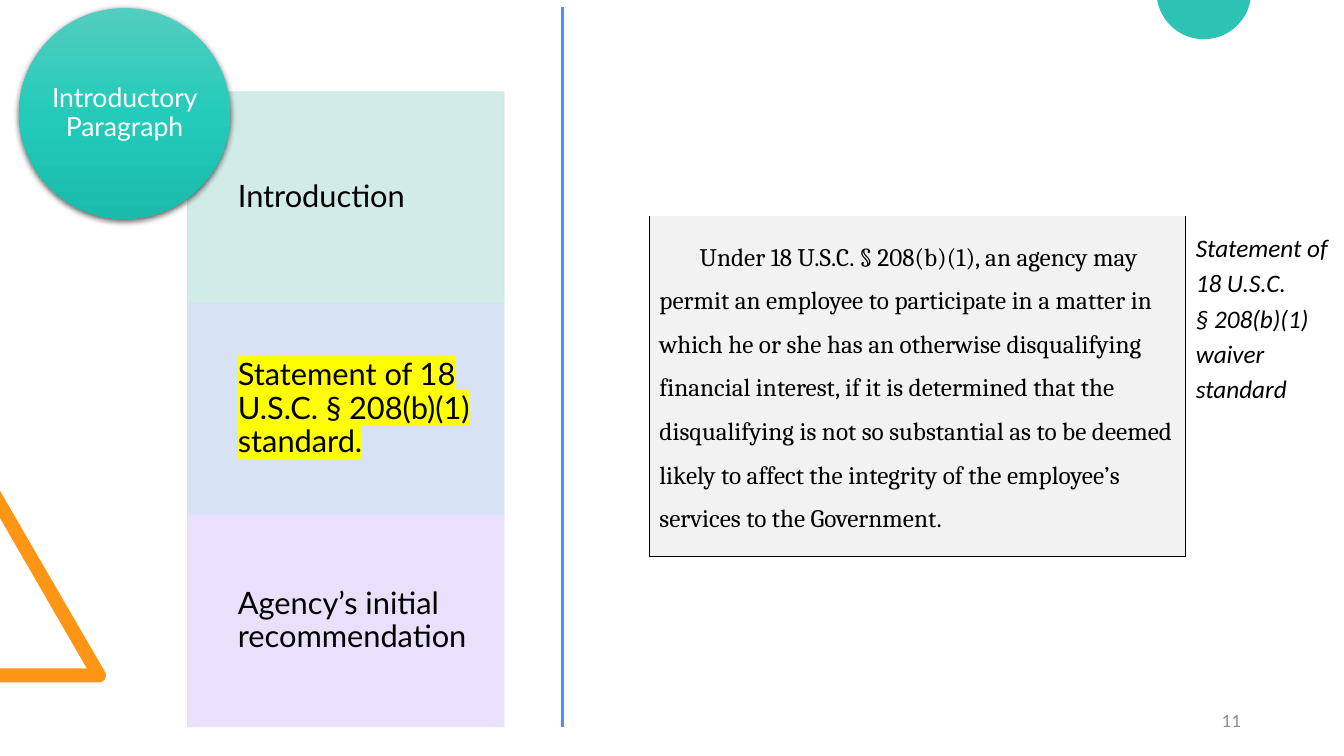
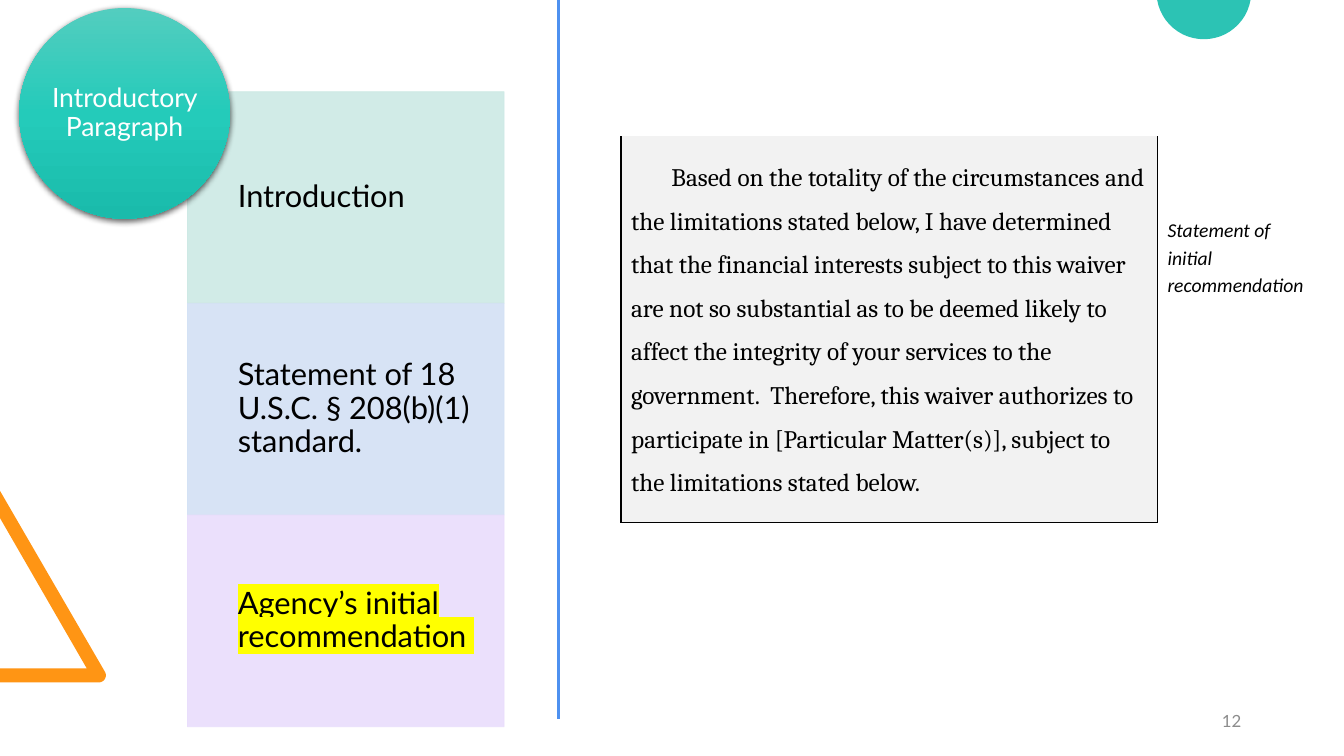
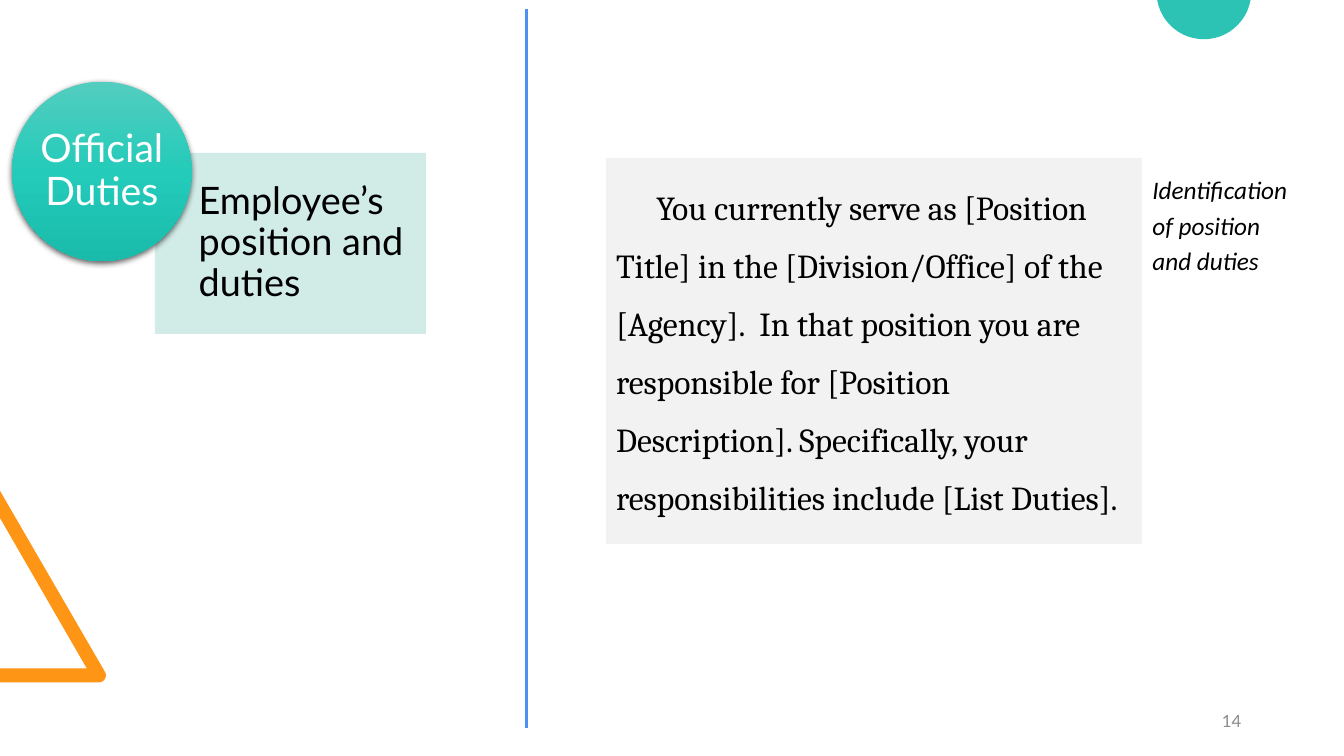
"""Build three slides that walk through the parts of a waiver letter."""
from dataclasses import dataclass
from math import cos, radians, sin

from lxml.etree import SubElement
from pptx import Presentation
from pptx.dml.color import RGBColor
from pptx.enum.shapes import MSO_CONNECTOR, MSO_SHAPE
from pptx.enum.text import MSO_ANCHOR, PP_ALIGN
from pptx.oxml.ns import qn
from pptx.util import Inches, Pt

COLOURS = {
    "orange": "FF9514", "teal": "2CC3B4", "rule": "4E91F0", "number": "8C8C8C",
    "mint": "CDE9E5", "sky": "D3E1F5", "lilac": "E9DDFC", "panel": "F2F2F2",
    "black": "000000", "white": "FFFFFF", "marker": "FFFF00",
    "circle top": "53CDBF", "circle middle": "24CBBA", "circle bottom": "1ABBAB",
}
BAND_COLOURS = ("mint", "sky", "lilac")
CIRCLE_STOPS = ((0, "circle top"), (50000, "circle middle"), (100000, "circle bottom"))


@dataclass(frozen=True)
class Outline:
    label: str
    label_size: int
    circle: tuple[float, float, float]
    topics: tuple[str, ...]
    topic_size: int
    band: tuple[float, float, float, float]
    indent: float
    inset: float


@dataclass(frozen=True)
class Excerpt:
    text: str
    size: int
    left: float
    top: float
    height: float
    remarks: tuple[str, ...]
    remark_size: int = 18
    remark_margin: float = 0.13
    borders: str = ""


@dataclass(frozen=True)
class Page:
    number: int
    outline: Outline
    excerpt: Excerpt
    rule: tuple[float, float, float]
    marked: int | None = None


INTRODUCTION = Outline(
    "Introductory Paragraph", 19, (0.19, 0.08, 2.09),
    ("Introduction", "Statement of 18 U.S.C. § 208(b)(1) standard.",
     "Agency’s initial recommendation "),
    22, (1.86, 0.91, 3.14, 2.1), 0.5, 0.17)
DUTIES = Outline(
    "Official Duties", 28, (0.12, 0.81, 1.78), ("Employee’s position and duties",),
    27, (1.54, 1.52, 2.68, 1.79), 0.43, 0.21)

PAGES = (
    Page(11, INTRODUCTION, Excerpt(
        "Under 18 U.S.C. § 208(b)(1), an agency may permit an employee to participate in a "
        "matter in which he or she has an otherwise disqualifying financial interest, if it is "
        "determined that the disqualifying is not so substantial as to be deemed likely to "
        "affect the integrity of the employee’s services to the Government.",
        18, 6.44, 2.14, 3.33,
        ("Statement of 18 U.S.C.", "§ 208(b)(1) waiver standard"), borders="LRB"),
        (5.58, 0.07, 7.21), marked=1),
    Page(12, INTRODUCTION, Excerpt(
        "Based on the totality of the circumstances and the limitations stated below, I have "
        "determined that the financial interests subject to this waiver are not so substantial "
        "as to be deemed likely to affect the integrity of your services to the government.  "
        "Therefore, this waiver authorizes to participate in [Particular Matter(s)], subject to "
        "the limitations stated below.",
        18, 6.16, 1.35, 4.23, ("Statement of initial recommendation",),
        remark_size=14, remark_margin=0.79, borders="LRB"),
        (5.54, 0, 7.13), marked=2),
    Page(14, DUTIES, Excerpt(
        "You currently serve as [Position Title] in the [Division/Office] of the [Agency].  In "
        "that position you are responsible for [Position Description]. Specifically, your "
        "responsibilities include [List Duties].",
        24, 6.01, 1.57, 4.37, ("Identification of position and duties",)),
        (5.22, 0.09, 7.22)),
)


def colour(name: str) -> RGBColor:
    return RGBColor.from_string(COLOURS[name])


def write(para, text: str, *, size: int, font: str = "Lato", ink: str = "black",
          italic: bool = False, marked: bool = False, spacing: float = 1.0,
          align=PP_ALIGN.LEFT, first_line: float = 0) -> None:
    para.alignment = align
    para.line_spacing = spacing
    if first_line:
        para._p.get_or_add_pPr().set("indent", str(Inches(first_line)))
    span = para.add_run()
    span.text = text
    span.font.name = font
    span.font.size = Pt(size)
    span.font.italic = italic
    span.font.color.rgb = colour(ink)
    if marked:
        properties = span._r.get_or_add_rPr()
        highlight = SubElement(properties, qn("a:highlight"))
        SubElement(highlight, qn("a:srgbClr"), val=COLOURS["marker"])
        properties.find(qn("a:solidFill")).addnext(highlight)


def set_frame(frame, left: float = 0.1, top: float = 0.05, right: float = 0.1,
              bottom: float = 0.05) -> None:
    frame.word_wrap = True
    frame.vertical_anchor = MSO_ANCHOR.MIDDLE
    frame.margin_left, frame.margin_top = Inches(left), Inches(top)
    frame.margin_right, frame.margin_bottom = Inches(right), Inches(bottom)


def arc(x: float, y: float, radius: float, start: int, end: int) -> list[tuple[float, float]]:
    steps = 24
    angles = [radians(start + (end - start) * step / steps) for step in range(steps + 1)]
    return [(x + radius * cos(angle), y + radius * sin(angle)) for angle in angles]


def add_outline_shape(page, points: list[tuple[float, float]], fill: str):
    corners = [(Inches(x), Inches(y)) for x, y in points]
    builder = page.shapes.build_freeform(*corners[0])
    builder.add_line_segments(corners[1:], close=True)
    shape = builder.convert_to_shape()
    shape.shadow.inherit = False
    shape.fill.solid()
    shape.fill.fore_color.rgb = colour(fill)
    shape.line.fill.background()
    return shape


def decorate_layout(layout, page) -> None:
    triangle = [(0, 6.77), (0, 6.63), (0.86, 6.63), (0, 5.14), (0, 4.87)]
    triangle += arc(0.98, 6.7, 0.07, -30, 90)
    disc = arc(11.94, -0.08, 0.47, 10, 170)
    for points, fill in ((triangle, "orange"), (disc, "teal")):
        layout.shapes.element.append(add_outline_shape(page, points, fill).element)


def add_band(page, outline: Outline, index: int, marked: bool) -> None:
    left, top, width, height = outline.band
    band = page.shapes.add_shape(MSO_SHAPE.RECTANGLE, Inches(left), Inches(top + index * height),
                                 Inches(width), Inches(height))
    band.shadow.inherit = False
    band.fill.solid()
    band.fill.fore_color.rgb = colour(BAND_COLOURS[index])
    band.line.color.rgb = colour(BAND_COLOURS[index])
    band.line.width = Pt(0.5)
    for tint in band.element.spPr.iter(qn("a:srgbClr")):
        SubElement(tint, qn("a:alpha"), val="90000")
    inset = outline.inset
    set_frame(band.text_frame, outline.indent, inset, inset, inset)
    write(band.text_frame.paragraphs[0], outline.topics[index], size=outline.topic_size,
          marked=marked, spacing=0.9)


def add_circle(page, outline: Outline) -> None:
    left, top, diameter = map(Inches, outline.circle)
    circle = page.shapes.add_shape(MSO_SHAPE.OVAL, left, top, diameter, diameter)
    circle.line.fill.background()
    circle.fill.gradient()
    circle.fill.gradient_angle = 270
    properties = circle.element.spPr
    stops = properties.find(".//" + qn("a:gsLst"))
    stops.clear()
    for position, name in CIRCLE_STOPS:
        stop = SubElement(stops, qn("a:gs"), pos=str(position))
        SubElement(stop, qn("a:srgbClr"), val=COLOURS[name])
    circle.shadow.inherit = False
    shadow = SubElement(properties.find(qn("a:effectLst")), qn("a:outerShdw"),
                        blurRad=str(Pt(4.5)), dist=str(Pt(1.5)), dir="5400000", rotWithShape="0")
    shade = SubElement(shadow, qn("a:srgbClr"), val=COLOURS["black"])
    SubElement(shade, qn("a:alpha"), val="63000")
    set_frame(circle.text_frame, 0, 0, 0, 0)
    write(circle.text_frame.paragraphs[0], outline.label, size=outline.label_size, ink="white",
          spacing=0.9, align=PP_ALIGN.CENTER)


def set_borders(cell, sides: str) -> None:
    properties = cell._tc.get_or_add_tcPr()
    for index, side in enumerate("LRTB"):
        edge = SubElement(properties, qn(f"a:ln{side}"), w=str(Pt(1)))
        if side in sides:
            SubElement(SubElement(edge, qn("a:solidFill")), qn("a:srgbClr"), val=COLOURS["black"])
        else:
            SubElement(edge, qn("a:noFill"))
        properties.insert(index, edge)


def add_excerpt(page, excerpt: Excerpt) -> None:
    widths = (5.32, 1.49)
    holder = page.shapes.add_table(1, 2, Inches(excerpt.left), Inches(excerpt.top),
                                   Inches(sum(widths)), Inches(excerpt.height))
    table = holder.table
    table.first_row = table.horz_banding = False
    table.rows[0].height = Inches(0)
    holder.height = Inches(excerpt.height)
    for column, width in zip(table.columns, widths):
        column.width = Inches(width)
    quote, remark = table.cell(0, 0), table.cell(0, 1)
    for cell, top, right in ((quote, 0.13, 0.1), (remark, excerpt.remark_margin, 0)):
        cell.margin_left, cell.margin_top = Inches(0.1), Inches(top)
        cell.margin_right, cell.margin_bottom = Inches(right), Inches(0.1)
    quote.fill.solid()
    quote.fill.fore_color.rgb = colour("panel")
    remark.fill.background()
    set_borders(quote, excerpt.borders)
    set_borders(remark, "L" if excerpt.borders else "")
    write(quote.text_frame.paragraphs[0], excerpt.text, size=excerpt.size, font="Cambria",
          spacing=1.5, first_line=0.4)
    for index, text in enumerate(excerpt.remarks):
        frame = remark.text_frame
        para = frame.add_paragraph() if index else frame.paragraphs[0]
        write(para, text, size=excerpt.remark_size, font="Calibri", italic=True, spacing=1.15)


def add_rule(page, x: float, top: float, bottom: float) -> None:
    rule = page.shapes.add_connector(MSO_CONNECTOR.STRAIGHT, Inches(x), Inches(top),
                                     Inches(x), Inches(bottom))
    rule.line.color.rgb = colour("rule")
    rule.line.width = Pt(2.25)
    SubElement(rule.element.spPr, qn("a:effectLst"))


def add_page_number(page, number: int) -> None:
    box = page.shapes.add_textbox(Inches(9.41), Inches(6.95), Inches(3), Inches(0.4))
    set_frame(box.text_frame)
    write(box.text_frame.paragraphs[0], str(number), size=12, ink="number",
          align=PP_ALIGN.RIGHT)


def main() -> None:
    deck = Presentation()
    deck.slide_width, deck.slide_height = Inches(13.33), Inches(7.5)
    layout = deck.slide_layouts[6]
    for index, plan in enumerate(PAGES):
        page = deck.slides.add_slide(layout)
        if index == 0:
            decorate_layout(layout, page)
        for topic in range(len(plan.outline.topics)):
            add_band(page, plan.outline, topic, topic == plan.marked)
        add_circle(page, plan.outline)
        add_page_number(page, plan.number)
        add_excerpt(page, plan.excerpt)
        add_rule(page, *plan.rule)
    deck.save("out.pptx")


if __name__ == "__main__":
    main()
